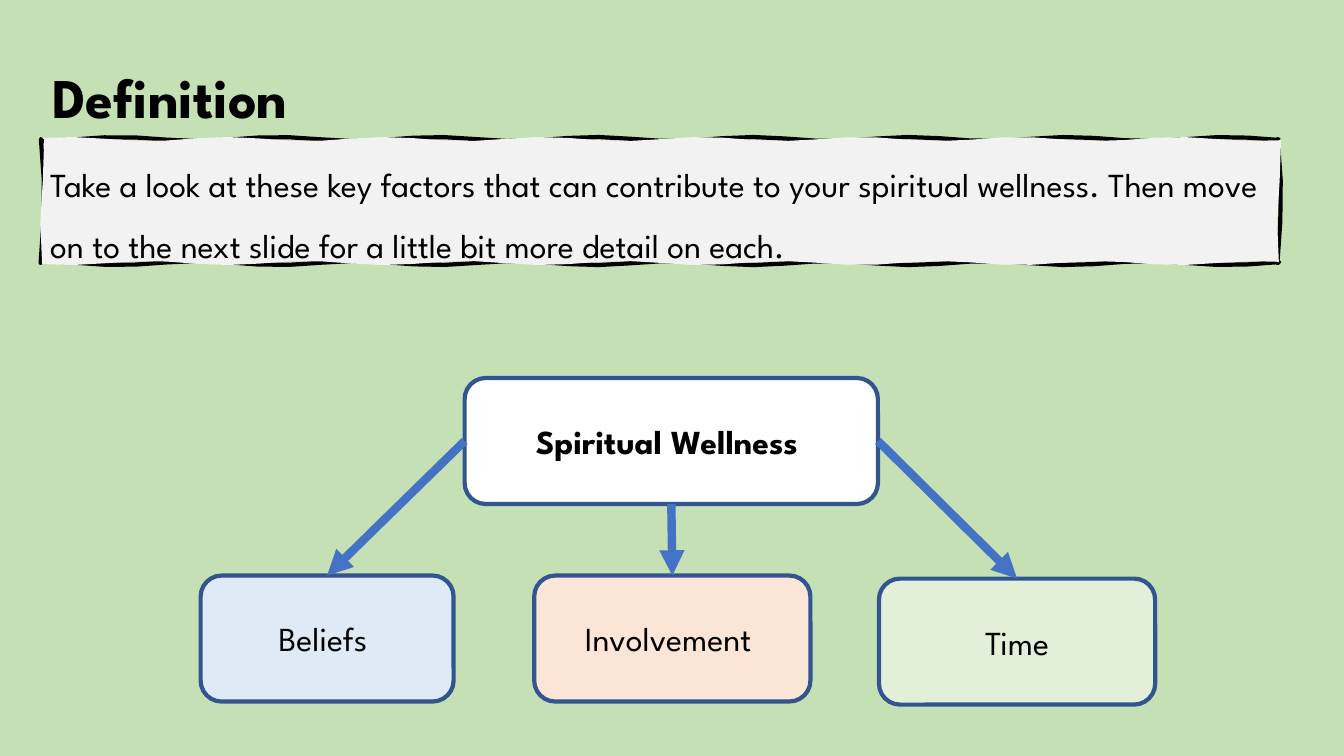
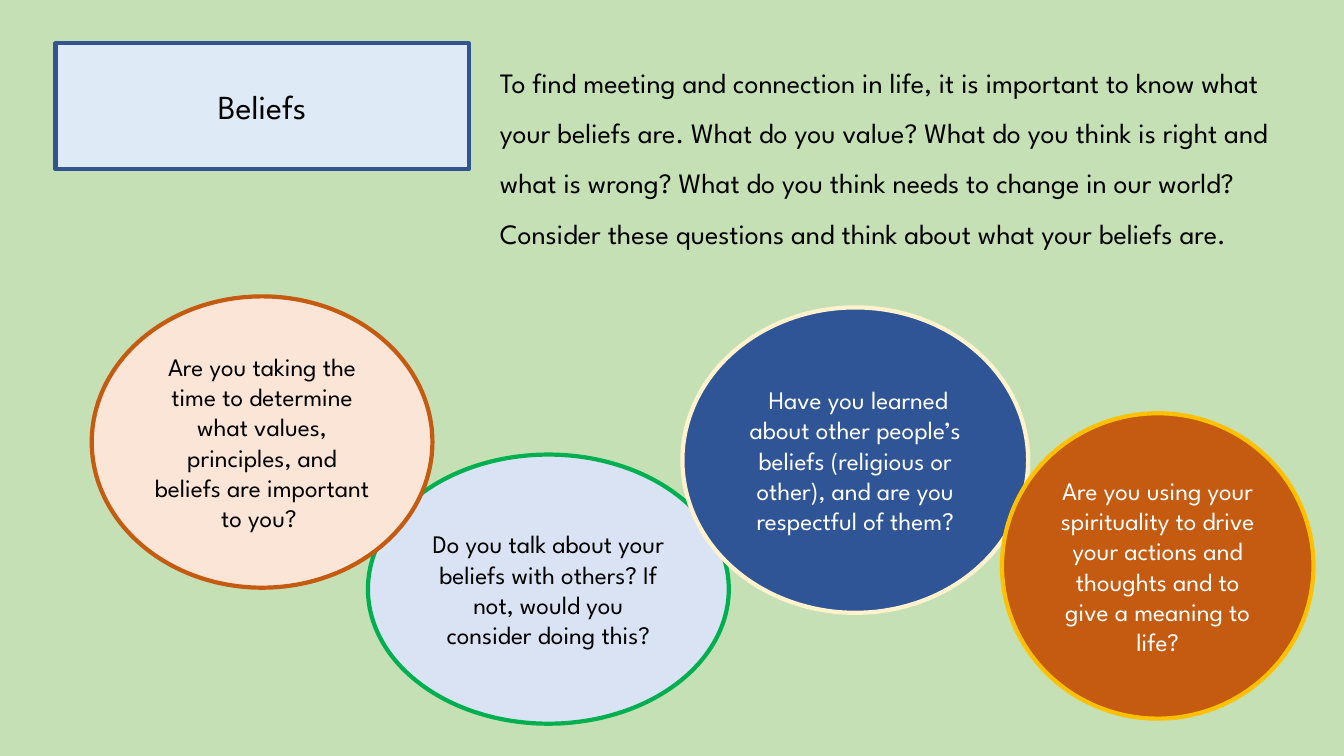
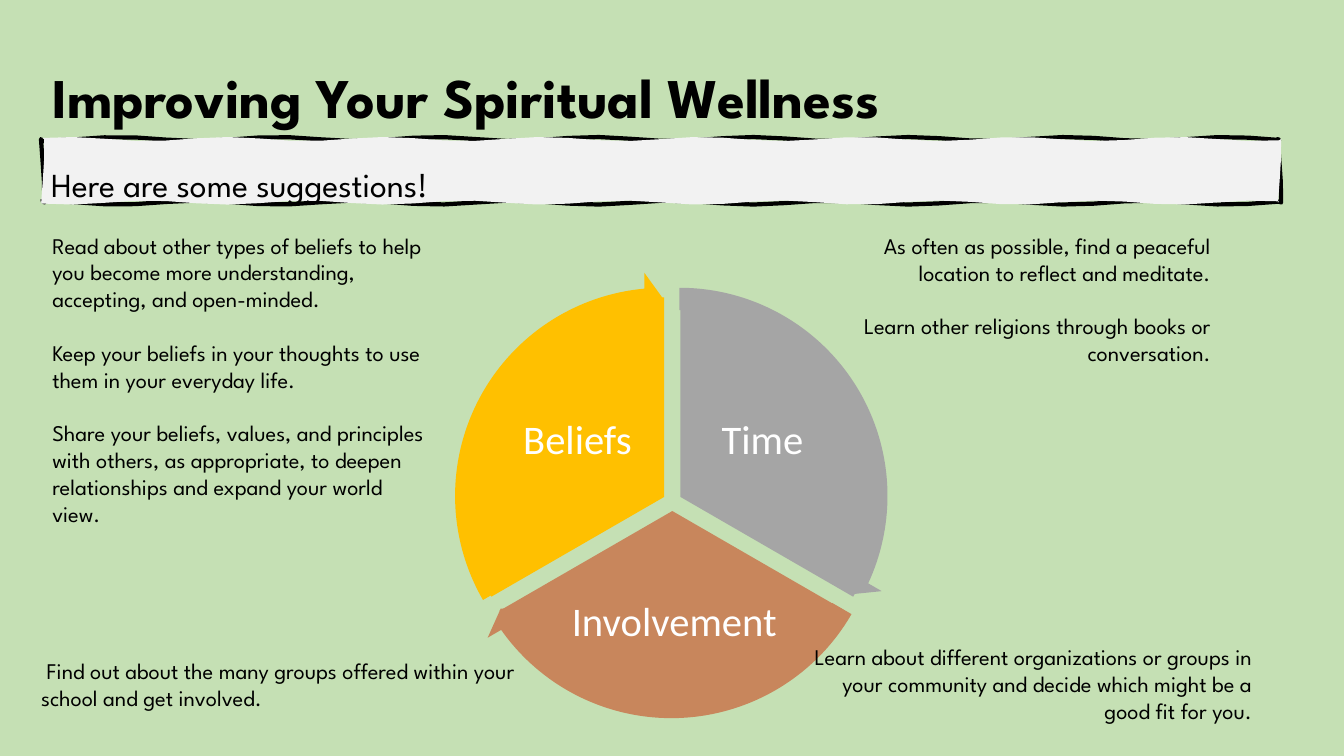
"""Build three slides about spiritual wellness."""
import math
from lxml import etree
from pptx import Presentation
from pptx import util as u
from pptx.dml.color import RGBColor
from pptx.enum import shapes, text
from pptx.oxml.ns import qn

PX = 9144
FONT = "League Spartan"
COLOURS = {
    "page": "C5E0B4", "ink": "000000", "white": "FFFFFF", "band": "F2F2F2",
    "navy": "325491", "arrow": "4472C4", "sky": "DEEBF7", "peach": "FBE5D6",
    "mint": "E2F0D9", "ice": "DAE3F3", "green": "00B050", "blue": "2F5597",
    "cream": "FFF2CC", "rust": "C55A11", "gold": "FFC000", "grey": "A5A5A5",
    "clay": "C8865C",
}
COLOUR = {name: RGBColor.from_string(code) for name, code in COLOURS.items()}
KIND = shapes.MSO_SHAPE
LEFT, CENTRE, RIGHT = text.PP_ALIGN.LEFT, text.PP_ALIGN.CENTER, text.PP_ALIGN.RIGHT
TOP, MIDDLE = text.MSO_ANCHOR.TOP, text.MSO_ANCHOR.MIDDLE


def write(box, words, size, colour="ink", align=LEFT, anchor=TOP, spacing=1.0,
          after=0, bold=False, font=FONT):
    """Fill a box with paragraphs in one style."""
    frame = box.text_frame
    frame.text = words
    frame.word_wrap = True
    frame.auto_size = text.MSO_AUTO_SIZE.NONE
    frame.vertical_anchor = anchor
    for para in frame.paragraphs:
        para.alignment = align
        para.line_spacing = spacing
        para.space_before = u.Pt(0)
        para.space_after = u.Pt(after)
        for span in para.runs:
            span.font.size = u.Pt(size)
            span.font.name = font
            span.font.bold = bold
            span.font.color.rgb = COLOUR[colour]


def paint(shape, fill=None, line=None, width=3):
    """Set the fill and line of a shape and drop its shadow."""
    shape.shadow.inherit = False
    for part, colour in ((shape.fill, fill), (shape.line.fill, line)):
        if colour:
            part.solid()
            part.fore_color.rgb = COLOUR[colour]
        else:
            part.background()
    if line:
        shape.line.width = u.Pt(width)


deck = Presentation()
deck.slide_width, deck.slide_height = u.Inches(13.333), u.Inches(7.5)
background = deck.slide_master.background.fill
background.solid()
background.fore_color.rgb = COLOUR["page"]
definition, beliefs, improving = [
    deck.slides.add_slide(deck.slide_layouts[number]) for number in (5, 1, 5)]

BAND_LEFT, BAND_RIGHT, BAND_TOP = 42, 1269, 138
headed = [
    (definition, "Definition", 261,
     "Take a look at these key factors that can contribute to your spiritual "
     "wellness. Then move on to the next slide for a little bit more detail on each."),
    (improving, "Improving Your Spiritual Wellness", 201, "Here are some suggestions!"),
]
for page, heading, bottom, intro in headed:
    title = page.shapes.title
    title.left, title.top, title.width, title.height = [
        n * PX for n in (42, 57, 1139, 77)]
    write(title, heading, 40, bold=True)
    across = [BAND_LEFT + (BAND_RIGHT - BAND_LEFT) * i / 40 for i in range(41)]
    down = [BAND_TOP + (bottom - BAND_TOP) * i / 3 for i in range(4)]
    for phase in (0, 2):
        wave = {n: 2 * math.sin(n / 25 + phase) for n in across + down}
        edge = [(x, BAND_TOP + wave[x]) for x in across]
        edge += [(BAND_RIGHT + wave[y], y) for y in down]
        edge += [(x, bottom - wave[x]) for x in reversed(across)]
        edge += [(BAND_LEFT + wave[y], y) for y in reversed(down)]
        points = [(round(x * PX), round(y * PX)) for x, y in edge]
        outline = page.shapes.build_freeform(*points[0])
        outline.add_line_segments(points[1:])
        band = outline.convert_to_shape()
        if phase == 0:
            paint(band, line="ink")
    paint(band, fill="band")
    band.text_frame.margin_top = 7 * PX
    write(band, intro, 24, spacing=1.5)

boxes = []
for words, left, top, width, fill in (
        ("Spiritual Wellness ", 461, 375, 410, "white"),
        ("Beliefs ", 199, 571, 251, "sky"),
        ("Involvement ", 530, 571, 274, "peach"),
        ("Time", 872, 574, 274, "mint")):
    box = definition.shapes.add_shape(
        KIND.ROUNDED_RECTANGLE, left * PX, top * PX, width * PX, 125 * PX)
    paint(box, fill, "navy")
    write(box, words, 24, align=CENTRE, anchor=MIDDLE, bold=not boxes)
    boxes.append(box)
for side, box in enumerate(boxes[1:], 1):
    arrow = definition.shapes.add_connector(shapes.MSO_CONNECTOR.STRAIGHT, 0, 0, 0, 0)
    arrow.begin_connect(boxes[0], side)
    arrow.end_connect(box, 0)
    arrow.line.color.rgb = COLOUR["arrow"]
    arrow.line.width = u.Pt(6)
    etree.SubElement(arrow.line._get_or_add_ln(), qn("a:tailEnd"), type="triangle")
    etree.SubElement(arrow._element.spPr, qn("a:effectLst"))

title, body = beliefs.placeholders
title.left, title.top, title.width, title.height = [n * PX for n in (55, 43, 410, 125)]
geometry = etree.SubElement(title._element.spPr, qn("a:prstGeom"), prst="roundRect")
etree.SubElement(geometry, qn("a:avLst"))
paint(title, "sky", "navy")
write(title, "Beliefs", 24, align=CENTRE, anchor=MIDDLE)
body.left, body.top, body.width, body.height = [n * PX for n in (486, 43, 792, 256)]
write(body, "To find meeting and connection in life, it is important to know what your "
      "beliefs are. What do you value? What do you think is right and what is wrong? "
      "What do you think needs to change in our world? Consider these questions and "
      "think about what your beliefs are.", 20, spacing=1.5)
for para in body.text_frame.paragraphs:
    settings = para._p.get_or_add_pPr()
    settings.set("marL", "0")
    settings.set("indent", "0")
    etree.SubElement(settings, qn("a:buNone"))

for words, place, fill, line, colour in (
        ("Do you talk about your beliefs with others? If not, would you consider "
         "doing this?", (365, 451, 358, 267), "ice", "green", "ink"),
        (" Have you learned about other people’s beliefs (religious or other), and are "
         "you respectful of them?", (677, 305, 343, 303), "blue", "cream", "white"),
        ("Are you taking the time to determine what values, principles, and beliefs "
         "are important to you? ", (91, 294, 338, 289), "peach", "rust", "ink"),
        ("Are you using your spirituality to drive your actions and thoughts and to "
         "give a meaning to life?", (994, 410, 309, 303), "rust", "gold", "white")):
    bubble = beliefs.shapes.add_shape(KIND.OVAL, *[n * PX for n in place])
    paint(bubble, fill, line)
    write(bubble, words, 18, colour, CENTRE, MIDDLE)

sectors = [
    ("Time", "grey", (477, 295), (162, 18), (14.73, 161.99), (686, 379, 141, 118)),
    ("Involvement", "clay", (469, 309), (18, 90), (86.72, 18.01), (563, 566, 212, 104)),
    ("Beliefs ", "gold", (461, 295), (90, 162), (158.73, 90), (507, 379, 141, 118)),
]
for words, fill, (left, top), angles, sweep, place in sectors:
    sector = improving.shapes.add_shape(
        KIND.PIE, left * PX, top * PX, 396 * PX, 396 * PX)
    sector.adjustments[0], sector.adjustments[1] = angles
    paint(sector, fill)
    label = improving.shapes.add_textbox(*[n * PX for n in place])
    frame = label.text_frame
    frame.margin_left = frame.margin_right = 4 * PX
    frame.margin_top = frame.margin_bottom = 4 * PX
    write(label, words, 29, "white", CENTRE, MIDDLE, 0.9, after=10, font="Calibri")
for words, fill, (left, top), angles, sweep, place in sectors:
    ring = improving.shapes.add_shape(
        KIND.CIRCULAR_ARROW, (left - 25) * PX, (top - 25) * PX, 444 * PX, 444 * PX)
    for index, value in enumerate((0.05, 3.28, *sweep, 0.06)):
        ring.adjustments[index] = value
    paint(ring, fill)

for place, align, lines in (
        ((42, 225, 391, 360), LEFT, (
            "Read about other types of beliefs to help you become more understanding, "
            "accepting, and open-minded.",
            "Keep your beliefs in your thoughts to use them in your everyday life.",
            "Share your beliefs, values, and principles with others, as appropriate, "
            "to deepen relationships and expand your world view.")),
        ((820, 225, 391, 172), RIGHT, (
            "As often as possible, find a peaceful location to reflect and meditate.",
            "Learn other religions through books or conversation.")),
        ((31, 647, 507, 64), LEFT, (
            " Find out about the many groups offered within your school and get "
            "involved.",)),
        ((780, 633, 472, 118), RIGHT, (
            "Learn about different organizations or groups in your community and "
            "decide which might be a good fit for you.",))):
    advice = improving.shapes.add_textbox(*[n * PX for n in place])
    write(advice, "\n".join(lines), 16, align=align, after=19)

deck.save("out.pptx")
